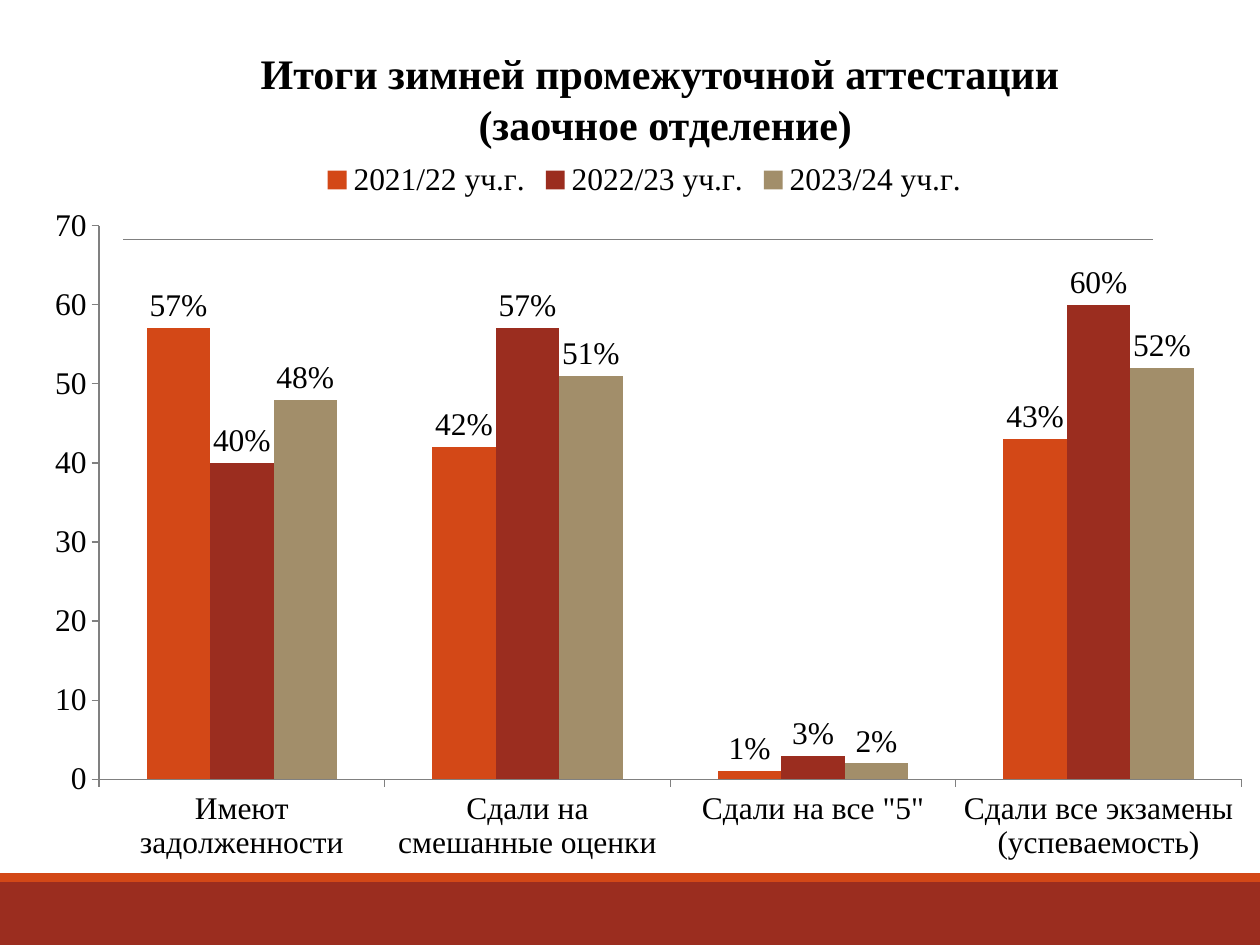
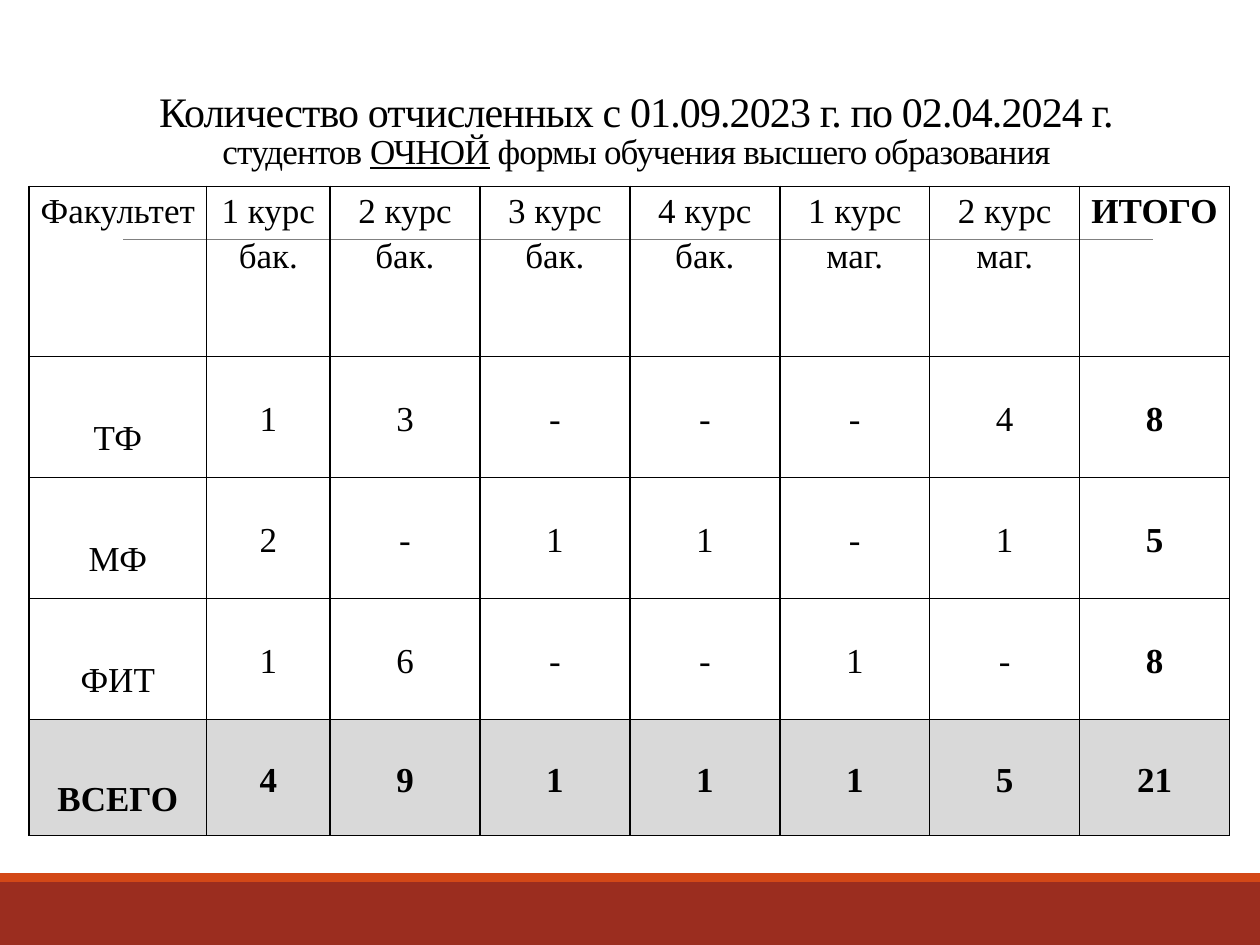
"""Build two slides on winter exam results and student withdrawals."""
from lxml.etree import SubElement
from pptx import Presentation
from pptx.chart.data import CategoryChartData
from pptx.dml.color import RGBColor
from pptx.enum.chart import XL_CHART_TYPE, XL_LABEL_POSITION, XL_LEGEND_POSITION, XL_TICK_MARK
from pptx.enum.shapes import MSO_CONNECTOR, MSO_SHAPE
from pptx.enum.text import MSO_ANCHOR, PP_ALIGN
from pptx.oxml import parse_xml
from pptx.oxml.ns import nsdecls, qn
from pptx.util import Inches, Pt

FONT = "Times New Roman"
COLORS = {
    "black": "000000",
    "orange": "D34817",
    "red": "9B2D1F",
    "tan": "A28E6A",
    "gray": "808080",
    "total": "D9D9D9",
}


def rgb(name):
    return RGBColor.from_string(COLORS[name])


def add_run(p, text, size, bold=False, underline=False, spacing=0):
    r = p.add_run()
    r.text = text
    r.font.name = FONT
    r.font.size = Pt(size)
    r.font.bold = bold
    r.font.underline = underline
    r.font.color.rgb = rgb("black")
    if spacing:
        r._r.get_or_add_rPr().set("spc", str(round(spacing * 100)))


prs = Presentation()
prs.slide_width, prs.slide_height = Inches(10), Inches(7.5)

titles = []
for left, top, width, height, anchor in [
    (0.78, 0.31, 9, 0.94, MSO_ANCHOR.MIDDLE),
    (0.55, 0.16, 9, 1.25, MSO_ANCHOR.BOTTOM),
]:
    s = prs.slides.add_slide(prs.slide_layouts[6])
    for band_top, band_height, color in [(7, 0.5, "red"), (6.93, 0.07, "orange")]:
        sp = s.shapes.add_shape(
            MSO_SHAPE.RECTANGLE, 0, Inches(band_top), prs.slide_width, Inches(band_height)
        )
        sp.shadow.inherit = False
        sp.fill.solid()
        sp.fill.fore_color.rgb = rgb(color)
        sp.line.fill.background()
    rule = s.shapes.add_connector(
        MSO_CONNECTOR.STRAIGHT, Inches(0.98), Inches(1.9), Inches(9.15), Inches(1.9)
    )
    rule.line.color.rgb = rgb("gray")
    rule.line.width = Pt(0.5)
    SubElement(rule._element.spPr, qn("a:effectLst"))
    tf = s.shapes.add_textbox(Inches(left), Inches(top), Inches(width), Inches(height)).text_frame
    tf.word_wrap = True
    tf.vertical_anchor = anchor
    p = tf.paragraphs[0]
    p.alignment = PP_ALIGN.CENTER
    titles.append(p)

results, withdrawals = prs.slides

p = titles[0]
add_run(p, "Итоги зимней промежуточной аттестации ", 24, bold=True)
p.add_line_break()
add_run(p, "(заочное отделение)", 24, bold=True)

data = CategoryChartData()
data.categories = [
    "Имеют задолженности",
    "Сдали на смешанные оценки",
    'Сдали на все "5"',
    "Сдали все экзамены (успеваемость)",
]
years = [
    ("2021/22 уч.г.", (57, 42, 1, 43), "orange"),
    ("2022/23 уч.г.", (40, 57, 3, 60), "red"),
    ("2023/24 уч.г.", (48, 51, 2, 52), "tan"),
]
for name, values, color in years:
    data.add_series(name, values)
chart = results.shapes.add_chart(
    XL_CHART_TYPE.COLUMN_CLUSTERED, Inches(0.23), Inches(1.17), Inches(9.77), Inches(5.86), data
).chart
chart.has_title = False
chart.font.name = FONT
chart.font.size = Pt(18)
chart.font.color.rgb = rgb("black")
chart.has_legend = True
chart.legend.position = XL_LEGEND_POSITION.TOP
chart.legend.include_in_layout = False

for axis in (chart.category_axis, chart.value_axis):
    axis.has_major_gridlines = False
    axis.major_tick_mark = XL_TICK_MARK.OUTSIDE
    axis.format.line.color.rgb = rgb("gray")
chart.value_axis.minimum_scale = 0
chart.value_axis.maximum_scale = 70
chart.value_axis.major_unit = 10

plot = chart.plots[0]
plot.gap_width = 150
plot.overlap = 0
plot.vary_by_categories = False
plot.has_data_labels = True
labels = plot.data_labels
labels.show_value = True
labels.number_format = '0"%"'
labels.number_format_is_linked = False
labels.position = XL_LABEL_POSITION.OUTSIDE_END
for series, (name, values, color) in zip(plot.series, years):
    series.format.fill.solid()
    series.format.fill.fore_color.rgb = rgb(color)

plot_area = chart._chartSpace.chart.plotArea
for old in plot_area.findall(qn("c:layout")):
    plot_area.remove(old)
plot_area.insert(0, parse_xml(
    f'<c:layout {nsdecls("c")}><c:manualLayout><c:layoutTarget val="inner"/>'
    '<c:xMode val="edge"/><c:yMode val="edge"/>'
    '<c:x val="0.057"/><c:y val="0.106"/><c:w val="0.928"/><c:h val="0.75"/>'
    "</c:manualLayout></c:layout>"
))

p = titles[1]
p.line_spacing = 0.85
add_run(p, "Количество отчисленных с 01.09.2023 г. по 02.04.2024 г.", 24, spacing=-0.5)
p.add_line_break()
add_run(p, "студентов ", 20, spacing=-0.5)
add_run(p, "ОЧНОЙ", 20, underline=True, spacing=-0.5)
add_run(p, " формы обучения высшего образования", 20, spacing=-0.5)

rows = [
    ["Факультет", "1 курс бак.", "2 курс бак.", "3 курс бак.", "4 курс бак.",
     "1 курс маг.", "2 курс маг.", "ИТОГО"],
    ["ТФ", "1", "3", "-", "-", "-", "4", "8"],
    ["МФ", "2", "-", "1", "1", "-", "1", "5"],
    ["ФИТ", "1", "6", "-", "-", "1", "-", "8"],
    ["ВСЕГО", "4", "9", "1", "1", "1", "5", "21"],
]
widths = [1.41, 0.98] + [1.19] * 6
heights = [1.35] + [0.96] * 3 + [0.92]
last_row, last_col = len(rows) - 1, len(widths) - 1
table = withdrawals.shapes.add_table(
    len(rows), len(widths), Inches(0.23), Inches(1.48), Inches(9.53), Inches(5.16)
).table
table.first_row = False
table.horz_banding = False
for column, width in zip(table.columns, widths):
    column.width = Inches(width)
for row, height in zip(table.rows, heights):
    row.height = Inches(height)

for i, row in enumerate(rows):
    for j, text in enumerate(row):
        cell = table.cell(i, j)
        cell.margin_left = cell.margin_right = Inches(0.07)
        cell.margin_top = Inches(0.3 if i and j == 0 else 0)
        cell.margin_bottom = 0
        cell.vertical_anchor = MSO_ANCHOR.MIDDLE if i else MSO_ANCHOR.TOP
        p = cell.text_frame.paragraphs[0]
        p.alignment = PP_ALIGN.CENTER
        p.line_spacing = 1.15
        add_run(p, text, 20, bold=i == last_row or j == last_col)
        tc_pr = cell._tc.get_or_add_tcPr()
        for side in ("lnL", "lnR", "lnT", "lnB"):
            ln = SubElement(tc_pr, qn(f"a:{side}"), w=str(Pt(1)))
            fill = SubElement(ln, qn("a:solidFill"))
            SubElement(fill, qn("a:srgbClr"), val=COLORS["black"])
        if i == last_row:
            cell.fill.solid()
            cell.fill.fore_color.rgb = rgb("total")
        else:
            cell.fill.background()

prs.save("out.pptx")
